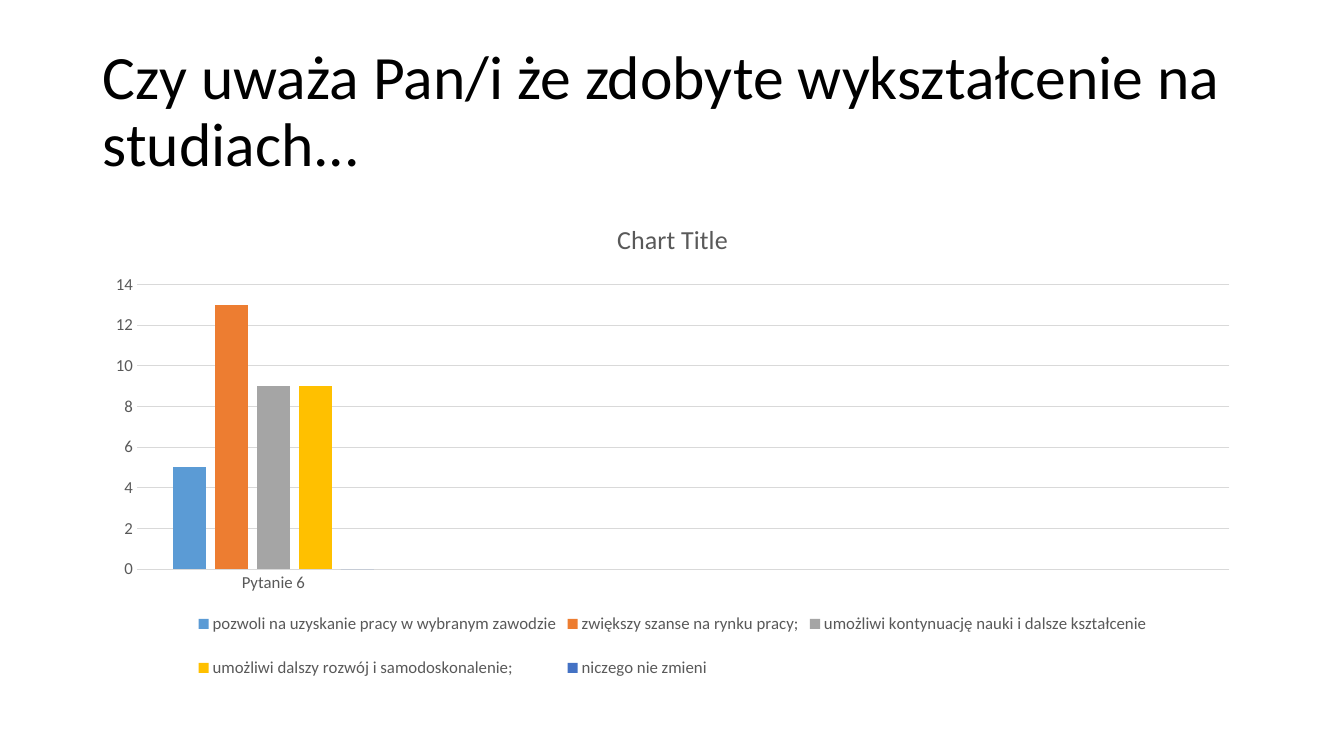
from pptx import Presentation
from pptx.chart.data import CategoryChartData as ChartData
from pptx.dml.color import RGBColor
from pptx.enum.chart import XL_CHART_TYPE as Kind
from pptx.enum.chart import XL_LEGEND_POSITION as Spot
from pptx.enum.chart import XL_TICK_MARK as Tick
from pptx.enum.text import MSO_ANCHOR as Anchor
from pptx.enum.text import MSO_AUTO_SIZE as Fit
from pptx.enum.text import PP_ALIGN as Align
from pptx.util import Inches, Pt

FACE = "Calibri"
BLACK = RGBColor(0x00, 0x00, 0x00)
GRAY = RGBColor(0x59, 0x59, 0x59)
PALE = RGBColor(0xD9, 0xD9, 0xD9)
BLUE = RGBColor(0x5B, 0x9B, 0xD5)
ORANGE = RGBColor(0xED, 0x7D, 0x31)
SILVER = RGBColor(0xA5, 0xA5, 0xA5)
GOLD = RGBColor(0xFF, 0xC0, 0x00)
NAVY = RGBColor(0x44, 0x72, 0xC4)

WIDE, HIGH = Inches(13.33), Inches(7.5)
LEFT, SPAN = 0.069, 0.863

TITLE = "Czy uważa Pan/i że zdobyte wykształcenie na studiach..."
GROUPS = ["Pytanie 6", "", "", ""]
ANSWERS = [
    ("pozwoli na uzyskanie pracy w wybranym zawodzie", 5, BLUE),
    ("zwiększy szanse na rynku pracy;\n", 13, ORANGE),
    ("umożliwi kontynuację nauki i dalsze kształcenie", 9, SILVER),
    ("umożliwi dalszy rozwój i samodoskonalenie;", 9, GOLD),
    ("niczego nie zmieni", 0, NAVY),
]


def area(top, height):
    """Turn shares of the slide height into a box between the margins."""
    return (int(WIDE * LEFT), int(HIGH * top),
            int(WIDE * SPAN), int(HIGH * height))


def style(font, size, color):
    font.name, font.size, font.bold = FACE, Pt(size), False
    font.color.rgb = color


def rule(line):
    line.color.rgb = PALE
    line.width = Pt(0.75)


def add_title(slide, text):
    title = slide.shapes.title
    title.left, title.top, title.width, title.height = area(0.053, 0.193)
    frame = title.text_frame
    frame.text = text
    frame.word_wrap = True
    frame.auto_size = Fit.NONE
    frame.vertical_anchor = Anchor.MIDDLE
    para = frame.paragraphs[0]
    para.alignment = Align.LEFT
    para.line_spacing = 0.9
    style(para.font, 44, BLACK)


def set_axis(axis):
    axis.major_tick_mark = axis.minor_tick_mark = Tick.NONE
    style(axis.tick_labels.font, 12, GRAY)


def add_bars(slide):
    data = ChartData()
    data.categories = GROUPS
    for name, count, _ in ANSWERS:
        data.add_series(name, [count] + [None] * (len(GROUPS) - 1))
    chart = slide.shapes.add_chart(
        Kind.COLUMN_CLUSTERED, *area(0.267, 0.635), data).chart
    style(chart.font, 10, BLACK)

    head = chart.chart_title
    head.include_in_layout = False
    head.text_frame.text = "Chart Title"
    style(head.text_frame.paragraphs[0].font, 18.6, GRAY)

    base, scale = chart.category_axis, chart.value_axis
    set_axis(base)
    set_axis(scale)
    rule(base.format.line)
    scale.format.line.fill.background()
    scale.has_major_gridlines = True
    rule(scale.major_gridlines.format.line)

    plot = chart.plots[0]
    plot.gap_width, plot.overlap = 219, -27
    plot.vary_by_categories = False
    for bars, (_, _, color) in zip(plot.series, ANSWERS):
        bars.format.fill.solid()
        bars.format.fill.fore_color.rgb = color

    chart.has_legend = True
    chart.legend.position = Spot.BOTTOM
    chart.legend.include_in_layout = False
    style(chart.legend.font, 12, GRAY)


def main():
    deck = Presentation()
    deck.slide_width, deck.slide_height = WIDE, HIGH
    slide = deck.slides.add_slide(deck.slide_layouts.get_by_name("Title Only"))
    add_title(slide, TITLE)
    add_bars(slide)
    deck.save("out.pptx")


if __name__ == "__main__":
    main()
